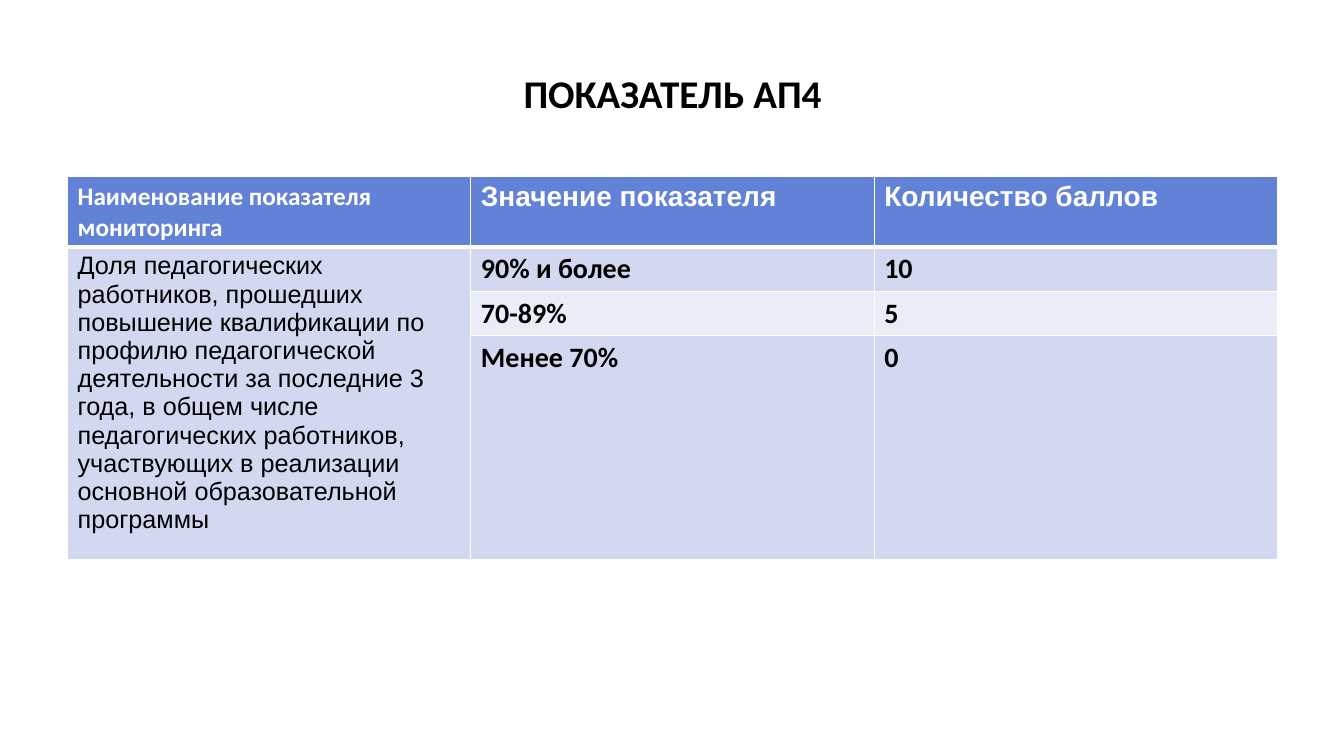
"""Builds the slide with the scoring table for indicator АП4."""
from lxml import etree
from pptx import Presentation
from pptx.dml.color import RGBColor
from pptx.enum.text import MSO_ANCHOR as Anchor, PP_ALIGN as Align
from pptx.oxml.ns import qn
from pptx.util import Inches, Pt

WHITE, BLACK = "FFFFFF", "000000"
HEADER, BAND_DARK, BAND_LIGHT = "6182D6", "D2D8F0", "EAEDF7"
HEADINGS = ["Наименование показателя мониторинга", "Значение показателя", "Количество баллов"]
INDICATOR = (
    "Доля педагогических работников, прошедших повышение квалификации по профилю "
    "педагогической деятельности за последние 3 года, в общем числе педагогических "
    "работников, участвующих в реализации основной образовательной программы"
)
SCORES = [("90% и более", "10"), ("70-89%", "5"), ("Менее 70%", "0")]
ROW_HEIGHTS = [0.7, 0.44, 0.44, 2.03]


def rgb(value):
    return RGBColor.from_string(value)


class SlideBuilder:
    def __init__(self, slide):
        self.slide = slide

    def set_text(self, frame, text, size, face, color, bold=True, align=Align.LEFT):
        frame.word_wrap = True
        paragraph = frame.paragraphs[0]
        paragraph.text = text
        paragraph.alignment = align
        font = paragraph.font
        font.size, font.name, font.bold = Pt(size), face, bold
        font.color.rgb = rgb(color)

    def title(self, text, left, top, width, height):
        box = self.slide.shapes.add_textbox(Inches(left), Inches(top), Inches(width), Inches(height))
        box.text_frame.vertical_anchor = Anchor.MIDDLE
        self.set_text(box.text_frame, text, 28, "Calibri", BLACK, align=Align.CENTER)

    def table(self, left, top, column_widths, row_heights):
        frame = self.slide.shapes.add_table(
            len(row_heights), len(column_widths), Inches(left), Inches(top),
            Inches(sum(column_widths)), Inches(sum(row_heights)))
        table = frame.table
        for column, width in zip(table.columns, column_widths):
            column.width = Inches(width)
        for row, height in zip(table.rows, row_heights):
            row.height = Inches(height)
        return table

    def paint(self, cell, fill, top=1, bottom=1):
        properties = cell._tc.get_or_add_tcPr()
        for side, weight in (("L", 1), ("R", 1), ("T", top), ("B", bottom)):
            line = etree.SubElement(properties, qn(f"a:ln{side}"), w=str(Pt(weight)))
            solid = etree.SubElement(line, qn("a:solidFill"))
            etree.SubElement(solid, qn("a:srgbClr"), val=WHITE)
        cell.fill.solid()
        cell.fill.fore_color.rgb = rgb(fill)


def main():
    presentation = Presentation()
    presentation.slide_width, presentation.slide_height = Inches(13.33), Inches(7.5)
    builder = SlideBuilder(presentation.slides.add_slide(presentation.slide_layouts[6]))
    builder.title("ПОКАЗАТЕЛЬ АП4", 0.67, 0.3, 12, 1.25)

    scoring = builder.table(0.67, 1.75, [4, 4, 4], ROW_HEIGHTS)
    for column, heading in enumerate(HEADINGS):
        cell = scoring.cell(0, column)
        builder.paint(cell, HEADER, bottom=3)
        size, face = (20, "Arial") if column else (18, "Calibri")
        builder.set_text(cell.text_frame, heading, size, face, WHITE)

    for row, score in enumerate(SCORES, start=1):
        band = BAND_DARK if row % 2 else BAND_LIGHT
        top = 3 if row == 1 else 1
        builder.paint(scoring.cell(row, 0), BAND_DARK, top=top)
        for column, text in enumerate(score, start=1):
            cell = scoring.cell(row, column)
            builder.paint(cell, band, top=top)
            builder.set_text(cell.text_frame, text, 20, "Calibri", BLACK)

    indicator_cell = scoring.cell(1, 0)
    indicator_cell.merge(scoring.cell(len(SCORES), 0))
    builder.set_text(indicator_cell.text_frame, INDICATOR, 18, "Arial", BLACK, bold=False)
    presentation.save("out.pptx")


if __name__ == "__main__":
    main()
